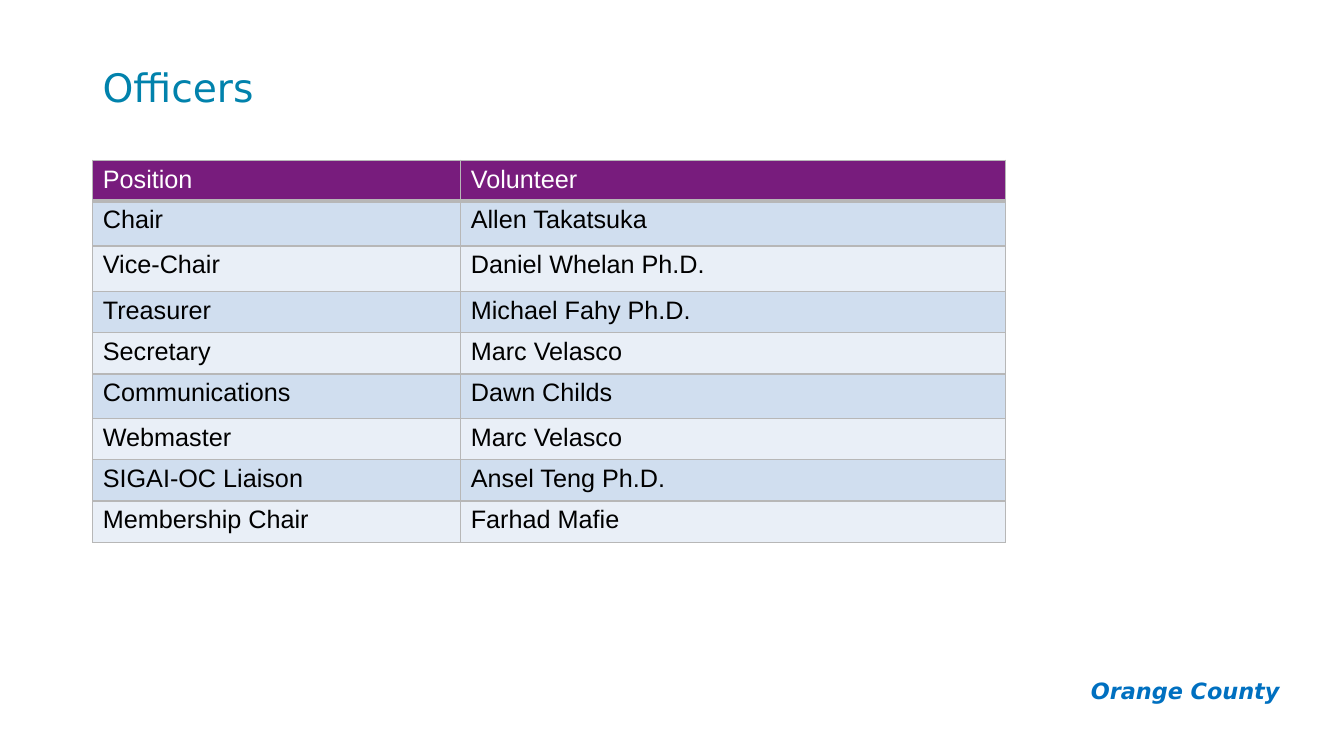
"""Build the Officers slide with its table of volunteers."""
from lxml.etree import SubElement as Sub
from pptx import Presentation
from pptx.dml.color import RGBColor as RGB
from pptx.enum.text import MSO_ANCHOR as Anchor, PP_ALIGN as Align
from pptx.oxml.ns import qn
from pptx.util import Inches, Pt

COLORS = {
    "title": "0182AC", "footer": "0070C0", "head": "781C7D",
    "odd": "D0DEEF", "even": "E9EFF7", "line": "B7B7B7",
    "white": "FFFFFF", "black": "000000",
}
ROWS = [
    ("Position", "Volunteer", 0.36),
    ("Chair", "Allen Takatsuka", 0.45),
    ("Vice-Chair", "Daniel Whelan Ph.D.", 0.45),
    ("Treasurer", "Michael Fahy Ph.D.", 0.41),
    ("Secretary", "Marc Velasco", 0.41),
    ("Communications", "Dawn Childs", 0.44),
    ("Webmaster", "Marc Velasco", 0.41),
    ("SIGAI-OC Liaison", "Ansel Teng Ph.D.", 0.41),
    ("Membership Chair", "Farhad Mafie", 0.41),
]
WIDTHS = (3.65, 5.4)


def color(name):
    return RGB.from_string(COLORS[name])


def style(para, face, size, tone, bold=False, italic=False):
    font = para.font
    font.name, font.size = face, Pt(size)
    font.bold, font.italic = bold, italic
    font.color.rgb = color(tone)


def add_text(slide, text, box, inset):
    frame = slide.shapes.add_textbox(*map(Inches, box)).text_frame
    frame.word_wrap = True
    frame.margin_top = frame.margin_bottom = Inches(inset)
    para = frame.paragraphs[0]
    para.text = text
    return frame, para


def add_edge(cell, side, width):
    edge = Sub(cell._tc.get_or_add_tcPr(), qn(f"a:ln{side}"), w=str(Pt(width)))
    fill = Sub(edge, qn("a:solidFill"))
    Sub(fill, qn("a:srgbClr"), val=COLORS["line"])


def fill_cell(cell, text, row):
    tops = {0: (1, 3), 1: (3, 1)}
    top, base = tops.get(row, (1, 1))
    for side, width in zip("LRTB", (1, 1, top, base)):
        add_edge(cell, side, width)
    cell.fill.solid()
    band = "odd" if row % 2 else "even"
    cell.fill.fore_color.rgb = color(band if row else "head")
    cell.text = text
    style(cell.text_frame.paragraphs[0], "Arial", 18, "black" if row else "white")


def add_grid(slide, left, top):
    high = sum(row[-1] for row in ROWS)
    box = map(Inches, (left, top, sum(WIDTHS), high))
    table = slide.shapes.add_table(len(ROWS), len(WIDTHS), *box).table
    for col, width in zip(table.columns, WIDTHS):
        col.width = Inches(width)
    for r, (*texts, high) in enumerate(ROWS):
        table.rows[r].height = Inches(high)
        for c, text in enumerate(texts):
            fill_cell(table.cell(r, c), text, r)


def main():
    deck = Presentation()
    deck.slide_width, deck.slide_height = Inches(13.33), Inches(7.5)
    slide = deck.slides.add_slide(deck.slide_layouts[6])
    _, para = add_text(slide, "Orange County", (10.51, 6.62, 2.28, 0.47), 0.1)
    para.alignment = Align.RIGHT
    style(para, "DejaVu Sans", 16, "footer", True, True)
    frame, para = add_text(slide, "Officers", (0.92, 0.4, 11.5, 0.99), 0.05)
    frame.vertical_anchor = Anchor.MIDDLE
    para.line_spacing = 0.9
    style(para, "DejaVu Sans", 28, "title")
    add_grid(slide, 0.92, 1.59)
    deck.save("out.pptx")


if __name__ == "__main__":
    main()
